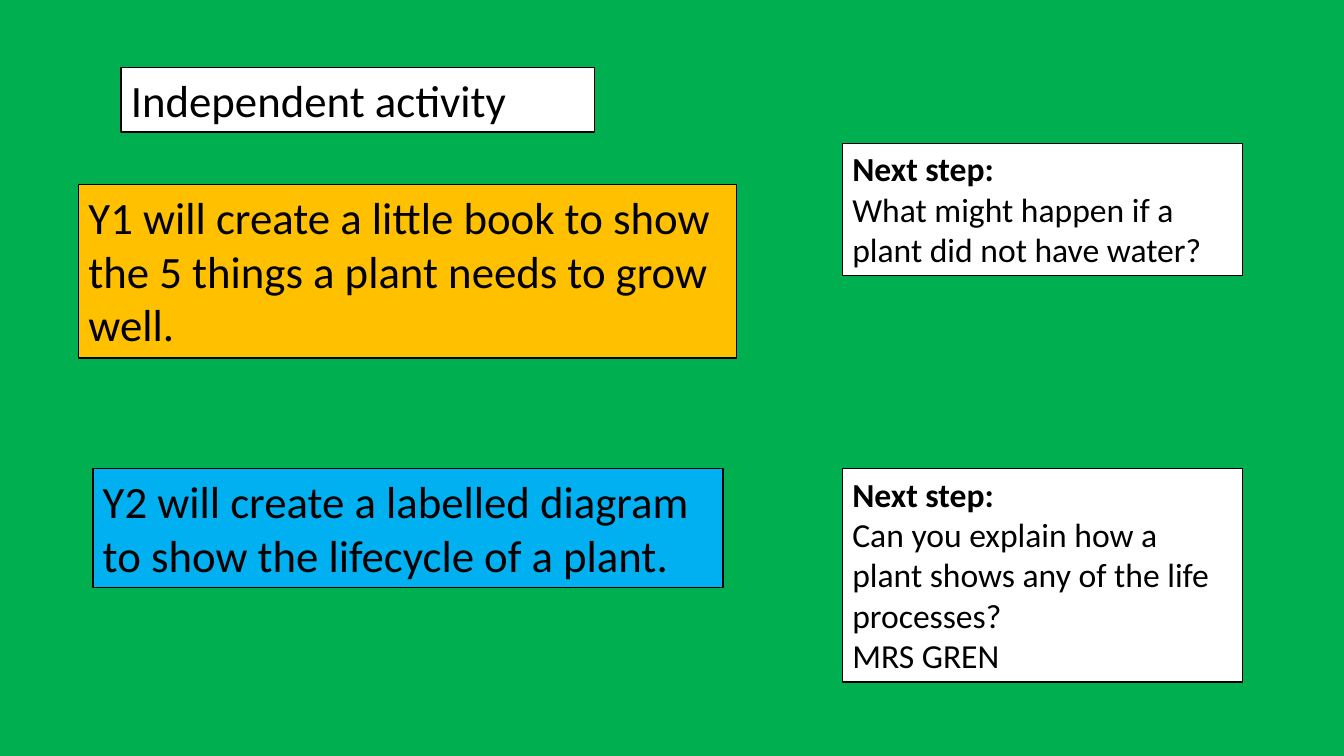
from dataclasses import dataclass

from pptx import Presentation
from pptx.dml.color import RGBColor
from pptx.enum.text import MSO_AUTO_SIZE
from pptx.slide import Slide
from pptx.util import Cm, Pt

BLACK, WHITE = "000000", "FFFFFF"
GREEN, AMBER, BLUE = "00B050", "FFC000", "00B0F0"
NEXT_STEP = "Next step:"
NEXT_LEFT, NEXT_WIDTH = 21.23, 10.08
Y2_TOP = 11.81


@dataclass
class Box:
    """A bordered text box; lengths in centimetres, size in points."""
    left: float
    top: float
    width: float
    height: float
    fill: str
    lines: list[str]
    size: int = 32


def next_step(top: float, height: float, *lines: str) -> Box:
    return Box(NEXT_LEFT, top, NEXT_WIDTH, height, WHITE, [NEXT_STEP, *lines], 24)


BOXES = [
    Box(1.98, 4.65, 16.59, 4.37, AMBER,
        ["Y1 will create a little book to show the 5 things a plant needs to grow well."]),
    Box(2.34, Y2_TOP, 15.88, 3.0, BLUE,
        ["Y2 will create a labelled diagram to show the lifecycle of a plant."]),
    Box(3.05, 1.7, 11.94, 1.63, WHITE, ["Independent activity"]),
    next_step(Y2_TOP, 5.38,
              "Can you explain how a plant shows any of the life processes?", "MRS GREN"),
    next_step(3.61, 3.33, "What might happen if a plant did not have water?"),
]


def color(value: str) -> RGBColor:
    return RGBColor.from_string(value)


def draw_box(s: Slide, box: Box) -> None:
    sp = s.shapes.add_textbox(Cm(box.left), Cm(box.top), Cm(box.width), Cm(box.height))
    sp.fill.solid()
    sp.fill.fore_color.rgb = color(box.fill)
    sp.line.color.rgb = color(BLACK)
    sp.line.width = Pt(1)
    tf = sp.text_frame
    tf.word_wrap = True
    tf.auto_size = MSO_AUTO_SIZE.SHAPE_TO_FIT_TEXT
    tf.text = "\n".join(box.lines)
    for p in tf.paragraphs:
        p.font.name = "Calibri"
        p.font.size = Pt(box.size)
        p.font.bold = p.text == NEXT_STEP
        p.font.color.rgb = color(BLACK)


def main() -> None:
    prs = Presentation()
    prs.slide_width, prs.slide_height = Cm(33.87), Cm(19.05)
    s = prs.slides.add_slide(prs.slide_layouts[6])
    s.background.fill.solid()
    s.background.fill.fore_color.rgb = color(GREEN)
    for box in BOXES:
        draw_box(s, box)
    prs.save("out.pptx")


if __name__ == "__main__":
    main()
